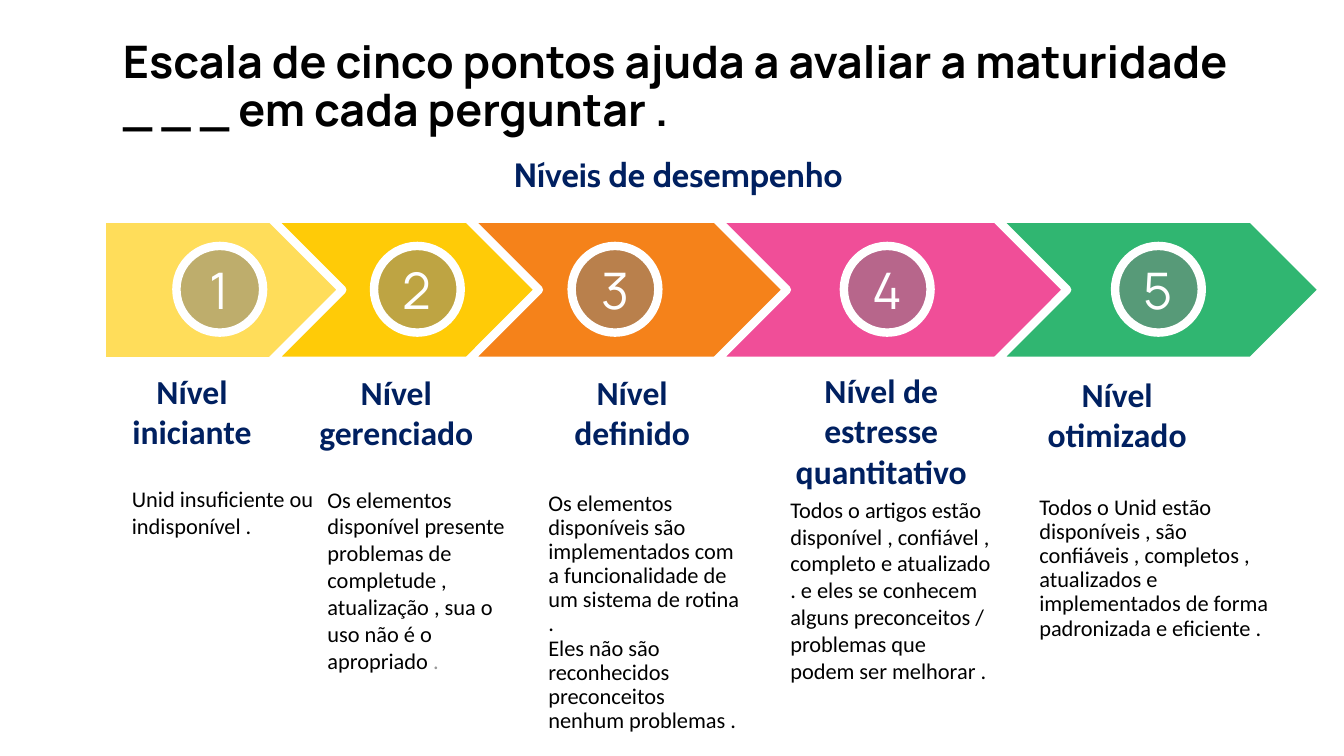
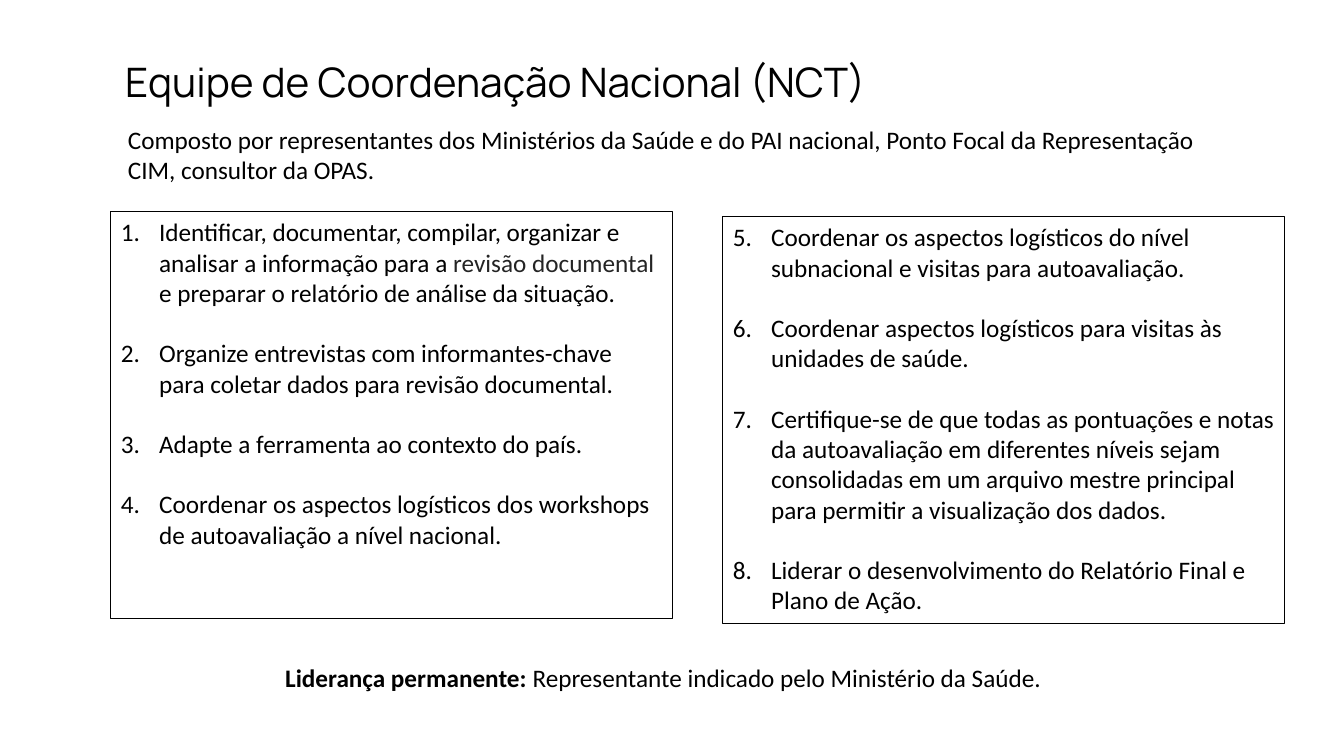
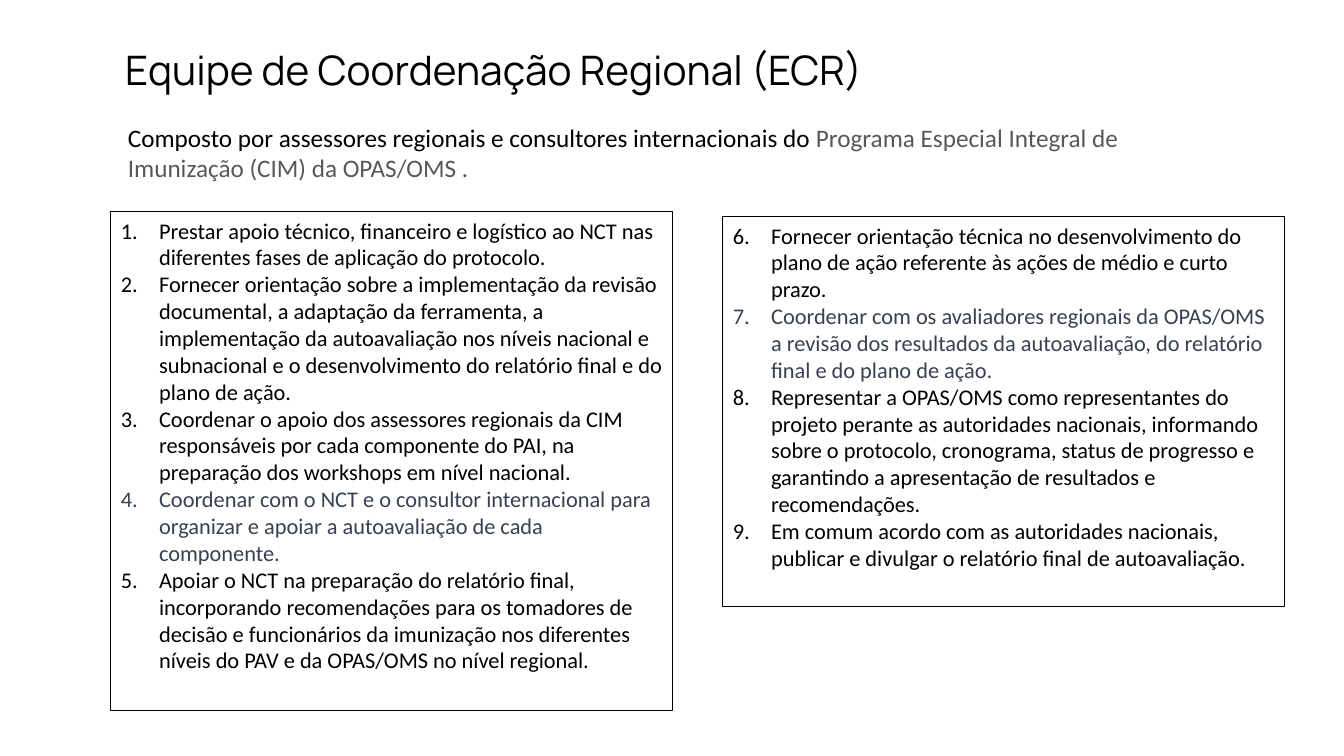
"""Build three slides on maturity levels and the coordination teams."""
from lxml import etree
from pptx import Presentation
from pptx.dml.color import RGBColor
from pptx.enum.shapes import MSO_SHAPE
from pptx.enum.text import MSO_ANCHOR, PP_ALIGN
from pptx.oxml.ns import qn
from pptx.util import Inches, Pt

RECTANGLE, CHEVRON, OVAL = MSO_SHAPE.RECTANGLE, MSO_SHAPE.CHEVRON, MSO_SHAPE.OVAL
TOP, MIDDLE = MSO_ANCHOR.TOP, MSO_ANCHOR.MIDDLE
LEFT, CENTER = PP_ALIGN.LEFT, PP_ALIGN.CENTER

BLACK = RGBColor(0x00, 0x00, 0x00)
WHITE = RGBColor(0xFF, 0xFF, 0xFF)
NAVY = RGBColor(0x00, 0x20, 0x60)
GRAY = RGBColor(0x7F, 0x7F, 0x7F)
LIGHT_GRAY = RGBColor(0x99, 0x99, 0x99)
MID_GRAY = RGBColor(0x58, 0x58, 0x58)
CHARCOAL = RGBColor(0x24, 0x24, 0x24)
SLATE = RGBColor(0x37, 0x41, 0x51)
AMBER = RGBColor(0xFF, 0xCB, 0x03)
YELLOW = RGBColor(0xFF, 0xCB, 0x07)
ORANGE = RGBColor(0xF5, 0x82, 0x1A)
PINK = RGBColor(0xF0, 0x4E, 0x98)
GREEN = RGBColor(0x30, 0xB6, 0x71)

SCALE_TITLE = {"name": "Manrope", "size": Pt(32), "bold": True}
TEAM_TITLE = {"name": "Manrope", "size": Pt(29)}
SUBTITLE = {"name": "Cabin", "size": Pt(24), "bold": True}
LEVEL_NAME = {"name": "Calibri", "size": Pt(24), "bold": True}
BADGE = {"name": "Manrope", "size": Pt(36)}
BODY = {"name": "Calibri", "size": Pt(18)}
SMALL = {"name": "Calibri", "size": Pt(16)}

BAND_TOP, BAND_HEIGHT = 2.17, 1.41
BADGE_TOP, BADGE_SIZE = 2.44, 0.86
INDENT = Inches(0.38)

LEVELS = [
    {"shape": RECTANGLE, "band": (1.01, 4.24), "color": AMBER, "opacity": 65, "badge": 1.75,
     "name": "Nível iniciante", "name_at": (1.04, 3.63, 1.73, 0.91),
     "text": ["Unid insuficiente ou indisponível ."],
     "text_at": (1.21, 4.76, 2.04, 1.18), "spacing": 1.0},
    {"shape": CHEVRON, "band": (2.69, 3.88), "color": YELLOW, "opacity": 100, "badge": 3.71,
     "name": "Nível gerenciado", "name_at": (2.79, 3.64, 2.28, 0.91),
     "text": [[("Os elementos disponível presente problemas de completude , "
                "atualização , sua o uso não é o apropriado ", BLACK), (".", LIGHT_GRAY)]],
     "text_at": (3.15, 4.77, 2.04, 2.26), "spacing": 1.0},
    {"shape": CHEVRON, "band": (4.64, 3.21), "color": ORANGE, "opacity": 100, "badge": 5.67,
     "name": "Nível definido", "name_at": (5.25, 3.64, 2.04, 0.91),
     "text": ["Os elementos disponíveis são implementados com a funcionalidade "
              "de um sistema de rotina .",
              "Eles não são reconhecidos preconceitos nenhum problemas ."],
     "text_at": (5.34, 4.83, 2.1, 2.07), "spacing": 0.9},
    {"shape": CHEVRON, "band": (7.1, 3.54), "color": PINK, "opacity": 100, "badge": 8.37,
     "name": "Nível de estresse quantitativo", "name_at": (7.7, 3.62, 2.08, 1.31),
     "text": ["Todos o artigos estão disponível , confiável , completo e atualizado . "
              "e eles se conhecem alguns preconceitos / problemas que podem ser melhorar ."],
     "text_at": (7.74, 4.87, 2.23, 1.99), "spacing": 1.0},
    {"shape": CHEVRON, "band": (9.88, 3.24), "color": GREEN, "opacity": 100, "badge": 11.06,
     "name": "Nível otimizado", "name_at": (9.92, 3.66, 2.32, 0.91),
     "text": ["Todos o Unid estão disponíveis , são confiáveis , completos , atualizados "
              "e implementados de forma padronizada e eficiente ."],
     "text_at": (10.21, 4.87, 2.56, 1.82), "spacing": 0.9},
]

NATIONAL_TASKS = [
    [("Identificar, documentar, compilar, organizar e analisar a informação para a ", BLACK),
     ("revisão documental ", CHARCOAL),
     ("e preparar o relatório de análise da situação.", BLACK)],
    "Organize entrevistas com informantes-chave para coletar dados para revisão documental.",
    "Adapte a ferramenta ao contexto do país.",
    "Coordenar os aspectos logísticos dos workshops de autoavaliação a nível nacional.",
    "Coordenar os aspectos logísticos do nível subnacional e visitas para autoavaliação.",
    "Coordenar aspectos logísticos para visitas às unidades de saúde.",
    "Certifique-se de que todas as pontuações e notas da autoavaliação em diferentes níveis "
    "sejam consolidadas em um arquivo mestre principal para permitir a visualização dos dados.",
    "Liderar o desenvolvimento do Relatório Final e Plano de Ação.",
]

REGIONAL_TASKS = [
    "Prestar apoio técnico, financeiro e logístico ao NCT nas diferentes fases de aplicação "
    "do protocolo.",
    "Fornecer orientação sobre a implementação da revisão documental, a adaptação da "
    "ferramenta, a implementação da autoavaliação nos níveis nacional e subnacional e o "
    "desenvolvimento do relatório final e do plano de ação.",
    "Coordenar o apoio dos assessores regionais da CIM responsáveis por cada componente do "
    "PAI, na preparação dos workshops em nível nacional.",
    [("Coordenar com o NCT e o consultor internacional para organizar e apoiar a "
      "autoavaliação de cada componente.", SLATE)],
    "Apoiar o NCT na preparação do relatório final, incorporando recomendações para os "
    "tomadores de decisão e funcionários da imunização nos diferentes níveis do PAV e da "
    "OPAS/OMS no nível regional.",
    "Fornecer orientação técnica no desenvolvimento do plano de ação referente às ações de "
    "médio e curto prazo.",
    [("Coordenar com os avaliadores regionais da OPAS/OMS a revisão dos resultados da "
      "autoavaliação, do relatório final e do plano de ação.", SLATE)],
    "Representar a OPAS/OMS como representantes do projeto perante as autoridades nacionais, "
    "informando sobre o protocolo, cronograma, status de progresso e garantindo a "
    "apresentação de resultados e recomendações.",
    "Em comum acordo com as autoridades nacionais, publicar e divulgar o relatório final de "
    "autoavaliação.",
]


def set_all(target, values):
    """Set each named attribute on the target."""
    for name, value in values.items():
        setattr(target, name, value)


def number_paragraph(paragraph, start):
    """Give the paragraph a hanging automatic number."""
    properties = paragraph._p.get_or_add_pPr()
    properties.set("marL", str(INDENT))
    properties.set("indent", str(-INDENT))
    numbering = etree.SubElement(properties, qn("a:buAutoNum"), type="arabicPeriod")
    if start > 1:
        numbering.set("startAt", str(start))


def write(shape, paragraphs, style, color=BLACK, align=LEFT, anchor=TOP,
          inset=(0.1, 0.05), spacing=1.0, gap=0, start=None):
    """Write paragraphs of plain text or coloured runs into a shape."""
    frame = shape.text_frame
    across, down = map(Inches, inset)
    set_all(frame, {"word_wrap": True, "vertical_anchor": anchor,
                    "margin_left": across, "margin_right": across,
                    "margin_top": down, "margin_bottom": down})
    for index, content in enumerate(paragraphs):
        paragraph = frame.add_paragraph() if index else frame.paragraphs[0]
        if start:
            number_paragraph(paragraph, start)
        set_all(paragraph, {"alignment": align, "line_spacing": spacing})
        if index and gap:
            paragraph.space_before = Pt(gap)
        runs = [(content, color)] if isinstance(content, str) else content
        for text, run_color, *extra in runs:
            run = paragraph.add_run()
            run.text = text
            set_all(run.font, style)
            for override in extra:
                set_all(run.font, override)
            run.font.color.rgb = run_color


def add_text(slide, at, paragraphs, style, **options):
    """Add a text box."""
    write(slide.shapes.add_textbox(*map(Inches, at)), paragraphs, style, **options)


def add_outlined(slide, kind, at, line, width, fill=None, opacity=100):
    """Add an outlined shape with an optional, possibly translucent, fill."""
    shape = slide.shapes.add_shape(kind, *map(Inches, at))
    shape.shadow.inherit = False
    if fill is None:
        shape.fill.background()
    else:
        shape.fill.solid()
        shape.fill.fore_color.rgb = fill
        if opacity < 100:
            tint = shape.element.spPr.find(".//" + qn("a:srgbClr"))
            etree.SubElement(tint, qn("a:alpha"), val=str(opacity * 1000))
    shape.line.color.rgb = line
    shape.line.width = Pt(width)
    return shape


def add_task_box(slide, at, tasks, style, start, gap):
    """Add a framed numbered list."""
    box = add_outlined(slide, RECTANGLE, at, BLACK, 0.75)
    write(box, tasks, style, start=start, gap=gap)


def add_scale_slide(slide):
    """Fill the slide with the five-level scale."""
    for level in LEVELS:
        left, width = level["band"]
        add_outlined(slide, level["shape"], (left, BAND_TOP, width, BAND_HEIGHT),
                     WHITE, 6, level["color"], level["opacity"])
    for number, level in enumerate(LEVELS, 1):
        badge = add_outlined(slide, OVAL, (level["badge"], BADGE_TOP, BADGE_SIZE, BADGE_SIZE),
                             WHITE, 6, GRAY, 50)
        write(badge, [str(number)], BADGE, color=WHITE, align=CENTER, anchor=MIDDLE,
              inset=(0.13, 0.13))
        add_text(slide, level["name_at"], [level["name"]], LEVEL_NAME, color=NAVY, align=CENTER)
        add_text(slide, level["text_at"], level["text"], SMALL, spacing=level["spacing"])
    add_text(slide, (1.12, 0.32, 11.48, 1.11),
             ["Escala de cinco pontos ajuda a avaliar a maturidade _ _ _ em cada perguntar ."],
             SCALE_TITLE, anchor=MIDDLE, spacing=0.9)
    add_text(slide, (2.72, 1.48, 8.01, 0.5), ["Níveis de desempenho"], SUBTITLE,
             color=NAVY, align=CENTER)


def add_team_slide(slide, title, title_height, intro, intro_top, tasks, split, heights,
                   style, gap=0):
    """Fill the slide with a team's title, members and two task boxes."""
    add_text(slide, (1.17, 0.26, 12.01, title_height), [title], TEAM_TITLE,
             anchor=MIDDLE, inset=(0.07, 0.04), spacing=0.9)
    add_text(slide, (1.17, intro_top, 11.14, 0.71), [intro], BODY)
    left_height, right_height = heights
    add_task_box(slide, (1.1, 2.1, 5.57, left_height), tasks[:split], style, 1, gap)
    add_task_box(slide, (7.17, 2.15, 5.57, right_height), tasks[split:], style, split + 1, gap)


def main():
    """Build and save the presentation."""
    deck = Presentation()
    deck.slide_width, deck.slide_height = Inches(13.33), Inches(7.5)
    scale, national, regional = [deck.slides.add_slide(deck.slide_layouts[6]) for _ in range(3)]
    add_scale_slide(scale)
    add_team_slide(national, "Equipe de Coordenação Nacional (NCT)", 1.16,
                   "Composto por representantes dos Ministérios da Saúde e do PAI nacional, "
                   "Ponto Focal da Representação CIM, consultor da OPAS.", 1.18,
                   NATIONAL_TASKS, 4, (4.04, 4.04), BODY, gap=21.6)
    add_text(national, (2.73, 6.52, 8.02, 0.4),
             [[("Liderança permanente: ", BLACK, {"bold": True}),
               ("Representante indicado pelo Ministério da Saúde.", BLACK)]], BODY)
    add_team_slide(regional, "Equipe de Coordenação Regional (ECR)", 0.92,
                   [("Composto por assessores regionais e consultores internacionais do ", BLACK),
                    ("Programa Especial Integral de Imunização (CIM) da OPAS/OMS .", MID_GRAY)],
                   1.16, REGIONAL_TASKS, 5, (4.95, 3.87), SMALL)
    deck.save("out.pptx")


if __name__ == "__main__":
    main()
